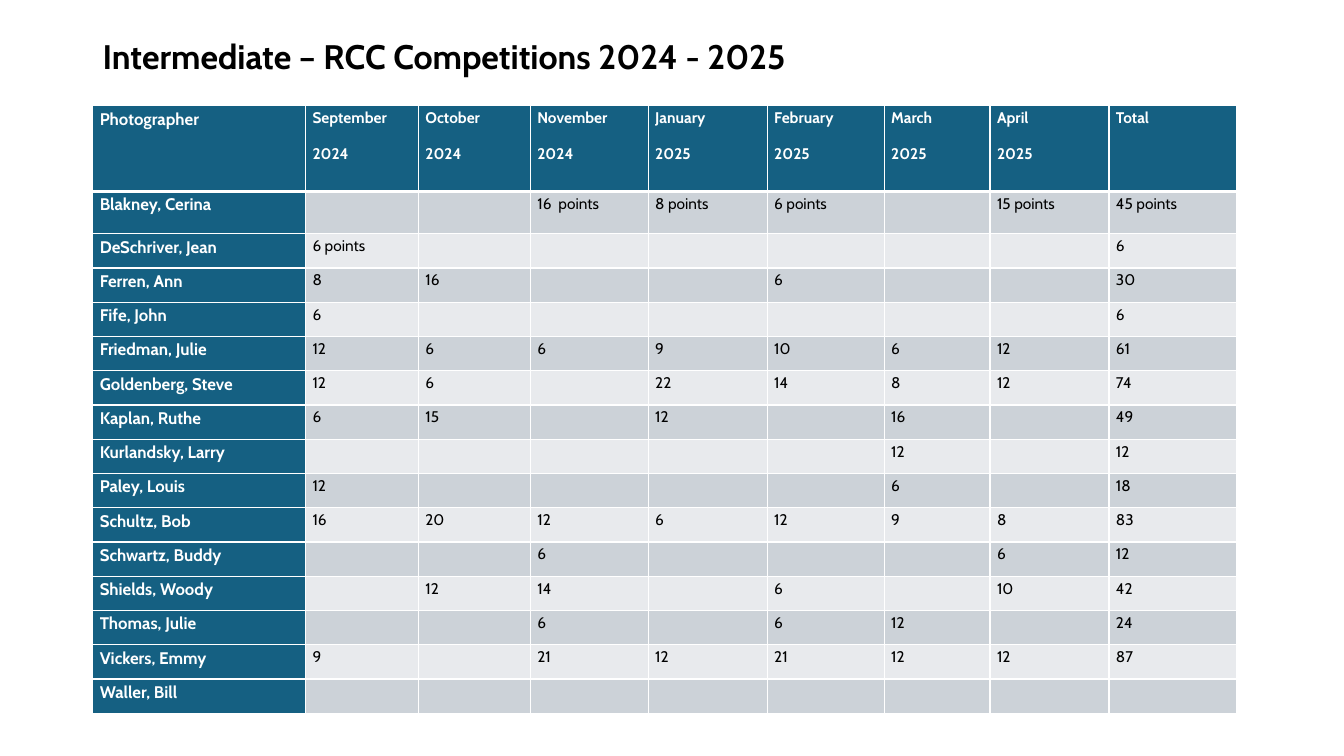
import pptx
import pptx.util
import pptx.dml.color
import pptx.enum.text
import pptx.oxml
import pptx.oxml.ns

Inches, Pt = pptx.util.Inches, pptx.util.Pt

TITLE = "Intermediate – RCC Competitions 2024 - 2025"
HEADER = ["Photographer", "September\n2024", "October\n2024", "November\n2024", "January\n2025",
          "February\n2025", "March\n2025", "April\n2025", "Total"]
SCORES = [
    ("Blakney, Cerina", "", "", "16  points", "8 points", "6 points", "", "15 points", "45 points"),
    ("DeSchriver, Jean", "6 points", "", "", "", "", "", "", "6"),
    ("Ferren, Ann", "8", "16", "", "", "6", "", "", "30"),
    ("Fife, John", "6", "", "", "", "", "", "", "6"),
    ("Friedman, Julie", "12", "6", "6", "9", "10", "6", "12", "61"),
    ("Goldenberg, Steve", "12", "6", "", "22", "14", "8", "12", "74"),
    ("Kaplan, Ruthe", "6", "15", "", "12", "", "16", "", "49"),
    ("Kurlandsky, Larry", "", "", "", "", "", "12", "", "12"),
    ("Paley, Louis", "12", "", "", "", "", "6", "", "18"),
    ("Schultz, Bob", "16", "20", "12", "6", "12", "9", "8", "83"),
    ("Schwartz, Buddy", "", "", "6", "", "", "", "6", "12"),
    ("Shields, Woody", "", "12", "14", "", "6", "", "10", "42"),
    ("Thomas, Julie", "", "", "6", "", "6", "12", "", "24"),
    ("Vickers, Emmy", "9", "", "21", "12", "21", "12", "12", "87"),
    ("Waller, Bill", "", "", "", "", "", "", "", ""),
]
COL_WIDTHS = [2.11, 1.12, 1.11, 1.17, 1.18, 1.16, 1.05, 1.18, 1.27]
ROW_HEIGHTS = [0.85, 0.42] + [0.34] * (len(SCORES) - 1)
THEME = {
    "font": "Cabin", "title_size": 24.3, "name_size": 12, "score_size": 11,
    "ink": "000000", "light": "FFFFFF", "head": "156082", "bands": ("CCD2D8", "E8EAED"),
}


def style_run(r, size, color, bold):
    r.font.name = THEME["font"]
    r.font.size = Pt(size)
    r.font.bold = bold
    r.font.color.rgb = pptx.dml.color.RGBColor.from_string(color)


def add_title(s):
    box = s.shapes.add_textbox(Inches(0.92), Inches(0.4), Inches(11.5), Inches(0.65))
    tf = box.text_frame
    tf.word_wrap = True
    tf.margin_top = tf.margin_bottom = 0
    tf.vertical_anchor = pptx.enum.text.MSO_ANCHOR.TOP
    p = tf.paragraphs[0]
    p.text = TITLE
    p.line_spacing = 0.9
    style_run(p.runs[0], THEME["title_size"], THEME["ink"], True)


def set_borders(cell, widths):
    tc_pr = cell._tc.get_or_add_tcPr()
    for side, width in widths.items():
        tc_pr.append(pptx.oxml.parse_xml(
            f'<a:ln{side} {pptx.oxml.ns.nsdecls("a")} w="{Pt(width)}"><a:solidFill>'
            f'<a:srgbClr val="{THEME["light"]}"/></a:solidFill></a:ln{side}>'))


def fill_cell(cell, text, row, col):
    is_head = row == 0 or col == 0
    size = THEME["name_size"] if col == 0 else THEME["score_size"]
    color = THEME["light"] if is_head else THEME["ink"]
    cell.margin_left = cell.margin_right = Inches(0.07)
    cell.margin_top = cell.margin_bottom = 0
    set_borders(cell, {"L": 1, "R": 1, "T": 3 if row == 1 else 1, "B": 3 if row == 0 else 1})
    cell.fill.solid()
    fill = THEME["head"] if is_head else THEME["bands"][(row - 1) % 2]
    cell.fill.fore_color.rgb = pptx.dml.color.RGBColor.from_string(fill)
    if not text:
        return
    cell.text_frame.text = text
    for p in cell.text_frame.paragraphs:
        p.line_spacing = 1.15
        p.space_after = Pt(10)
        for r in p.runs:
            style_run(r, size, color, is_head)


def add_score_table(s):
    rows = [HEADER] + SCORES
    frame = s.shapes.add_table(len(rows), len(HEADER), Inches(0.92), Inches(1.05),
                               Inches(sum(COL_WIDTHS)), Inches(sum(ROW_HEIGHTS)))
    table = frame.table
    table.first_col = True
    for column, width in zip(table.columns, COL_WIDTHS):
        column.width = Inches(width)
    for table_row, height in zip(table.rows, ROW_HEIGHTS):
        table_row.height = Inches(height)
    for i, values in enumerate(rows):
        for j, text in enumerate(values):
            fill_cell(table.cell(i, j), text, i, j)


def main():
    prs = pptx.Presentation()
    prs.slide_width, prs.slide_height = Inches(13.33), Inches(7.5)
    s = prs.slides.add_slide(prs.slide_layouts[6])
    add_title(s)
    add_score_table(s)
    prs.save("out.pptx")


if __name__ == "__main__":
    main()
